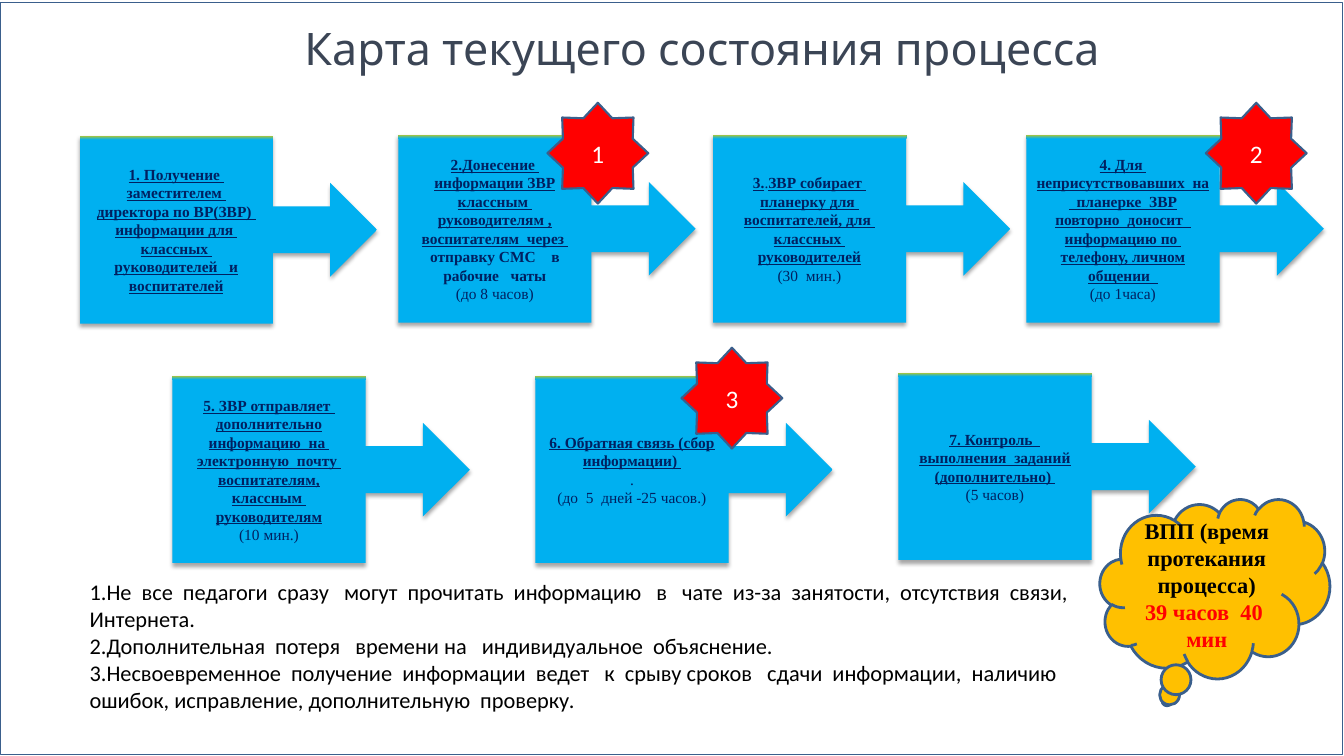
"""Build the slide with the map of the current state of the process."""
import lxml.etree
import pptx
import pptx.dml.color
import pptx.enum.shapes
import pptx.enum.text
import pptx.oxml
import pptx.util

PX = 9144
MSO = pptx.enum.shapes.MSO_SHAPE
ALIGN = pptx.enum.text.PP_ALIGN
ANCHOR = pptx.enum.text.MSO_ANCHOR
RGB = pptx.dml.color.RGBColor.from_string

THEME = {
    "outline": "3A5F8C", "step": "00B0F0", "edge": "9BC348",
    "star": "FF0000", "cloud": "FFC000",
    "title": ("League Spartan", 32, "3B4555", False, False),
    "action": ("Times New Roman", 11, "002060", True, True),
    "bold": ("Times New Roman", 11, "002060", True, False),
    "plain": ("Times New Roman", 11, "002060", False, False),
    "total": ("Times New Roman", 16, "000000", True, False),
    "hours": ("Times New Roman", 16, "FF0000", True, False),
    "note": ("Calibri", 16, "000000", False, False),
    "number": ("Calibri", 18, "FFFFFF", False, False),
}
SHADOW = (
    '<a:effectLst xmlns:a="http://schemas.openxmlformats.org/drawingml/2006/main">'
    '<a:outerShdw blurRad="39370" dist="22860" dir="5400000" rotWithShape="0">'
    '<a:srgbClr val="000000"><a:alpha val="35000"/></a:srgbClr>'
    '</a:outerShdw></a:effectLst>'
)

STEPS = [
    (79, 135, [[("1. Получение  заместителем  директора по ВР(ЗВР)  информации для  классных  руководителей   и воспитателей", "action")]]),
    (395, 134, [[("2.Донесение  информации ЗВР классным  руководителям , воспитателям  через  ", "action"),
                 ("отправку СМС    в рабочие   чаты", "bold")],
                [("(до 8 часов)", "plain")]]),
    (707, 134, [[("3.", "action"), (".", "plain"),
                 ("ЗВР собирает  планерку для  воспитателей, для  классных  руководителей", "action")],
                [("(30  мин.)", "plain")]]),
    (1018, 134, [[("4. Для  неприсутствовавших  на   планерке  ЗВР повторно  доносит   информацию по  телефону, личном общении  ", "action")],
                 [("(до 1часа)", "plain")]]),
    (171, 373, [[("5. ЗВР отправляет  дополнительно информацию  на  электронную  почту  воспитателям, классным  руководителям", "action")],
                [("(10 мин.)", "plain")]]),
    (531, 373, [[("6. Обратная связь (сбор информации) ", "action")],
                [(".", "plain")],
                [("(до  5  дней -25 часов.)", "plain")]]),
    (891, 370, [[("7. Контроль   выполнения  заданий (дополнительно) ", "action")],
                [("(5 часов)", "plain")]]),
]
TOTAL = [[("ВПП (время протекания процесса)", "total")], [("39 часов  40  мин", "hours")]]
NOTES = [
    [("1.Не  все  педагоги  сразу   могут  прочитать  информацию   в   чате  из-за  занятости,  отсутствия  связи,   Интернета.", "note")],
    [("2.Дополнительная  потеря   времени на   индивидуальное  объяснение.", "note")],
    [("3.Несвоевременное  получение  информации  ведет   к  срыву сроков   сдачи  информации,  наличию  ошибок, исправление, дополнительную  проверку.", "note")],
]
STARS = [("1", 543, 102), ("2", 1196, 102), ("3", 676, 345)]


def add_box(shapes, kind, left, top, width, height, fill=None, line_pt=None):
    """Add a preset shape, or a text box when kind is None."""
    place = [n * PX for n in (left, top, width, height)]
    if kind is None:
        return shapes.add_textbox(*place)
    s = shapes.add_shape(kind, *place)
    s.shadow.inherit = False
    if fill:
        s.fill.solid()
        s.fill.fore_color.rgb = RGB(fill)
    else:
        s.fill.background()
    if line_pt:
        s.line.color.rgb = RGB(THEME["outline"])
        s.line.width = pptx.util.Pt(line_pt)
    else:
        s.line.fill.background()
    return s


def write(s, paragraphs, align=ALIGN.CENTER, anchor=ANCHOR.MIDDLE):
    """Fill a shape with paragraphs of styled runs."""
    tf = s.text_frame
    tf.word_wrap = True
    tf.vertical_anchor = anchor
    for i, runs in enumerate(paragraphs):
        p = tf.add_paragraph() if i else tf.paragraphs[0]
        p.alignment = align
        for text, style in runs:
            r = p.add_run()
            r.text = text
            r.font.name, size, color, r.font.bold, r.font.underline = THEME[style]
            r.font.size = pptx.util.Pt(size)
            r.font.color.rgb = RGB(color)


prs = pptx.Presentation()
prs.slide_width, prs.slide_height = 1333 * PX, 750 * PX
shapes = prs.slides.add_slide(prs.slide_layouts[6]).shapes

add_box(shapes, MSO.RECTANGLE, 0, 2, 1331, 746, line_pt=0.25)
title = add_box(shapes, None, 227, 16, 939, 64)
write(title, [[("Карта текущего состояния процесса", "title")]], anchor=ANCHOR.TOP)

for left, top, paragraphs in STEPS:
    step = add_box(shapes, MSO.RIGHT_ARROW_CALLOUT, left, top, 295, 186)
    step.fill.gradient()
    step.fill.gradient_angle = 90
    stops = zip(step.fill.gradient_stops, (0.98, 1), ("step", "edge"))
    for stop, position, color in stops:
        stop.position = position
        stop.color.rgb = RGB(THEME[color])
    sp = step._element.spPr
    sp.replace(sp.find(pptx.oxml.ns.qn("a:effectLst")), lxml.etree.fromstring(SHADOW))
    write(step, paragraphs)

cloud = add_box(shapes, MSO.CLOUD_CALLOUT, 1091, 495, 228, 178, THEME["cloud"], 2)
write(cloud, TOTAL)

notes = add_box(shapes, None, 79, 569, 1023, 145)
write(notes, NOTES, ALIGN.LEFT, ANCHOR.TOP)

for number, left, top in STARS:
    star = add_box(shapes, MSO.STAR_8_POINT, left, top, 100, 100, THEME["star"], 1.5)
    write(star, [[(number, "number")]])

prs.save("out.pptx")
